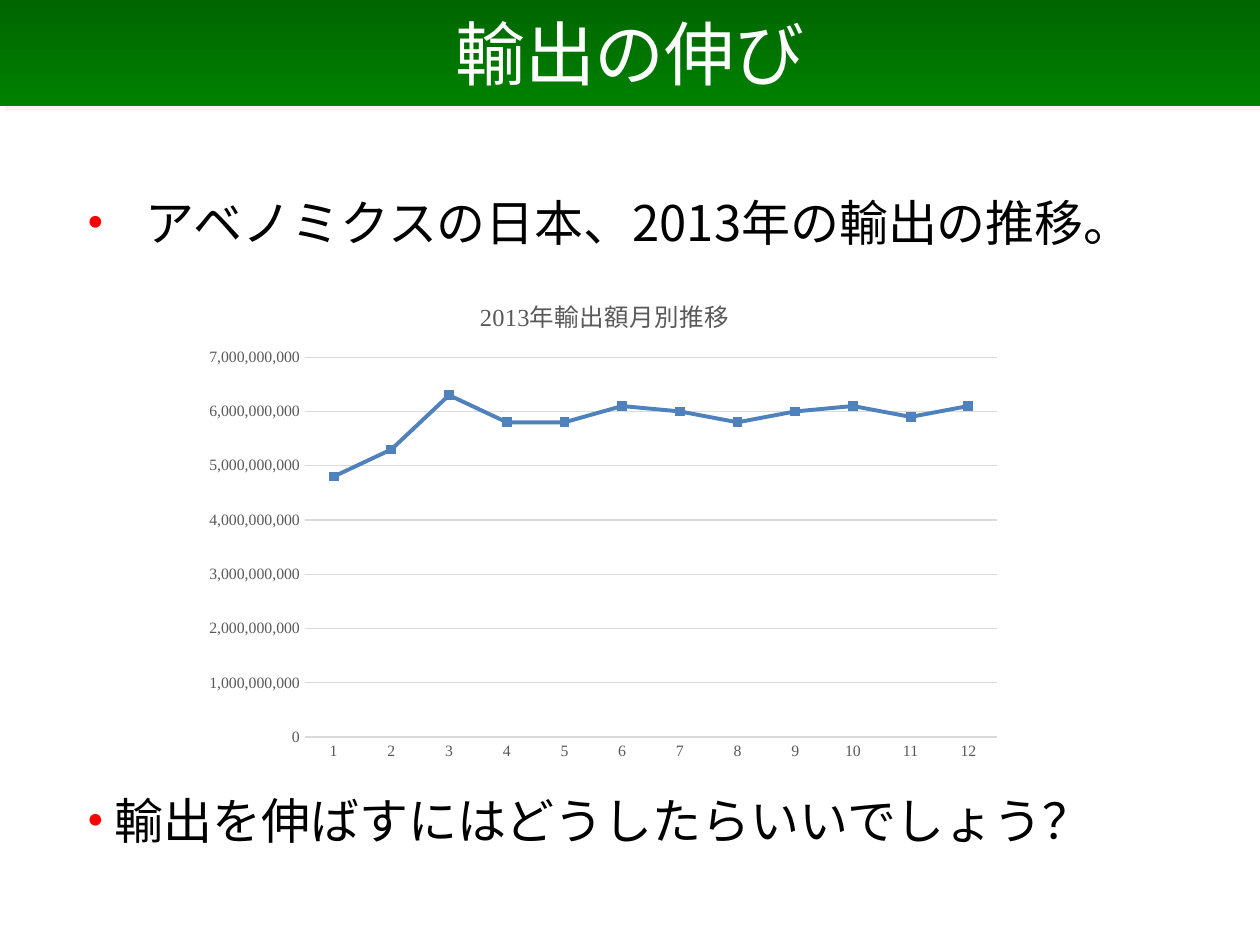
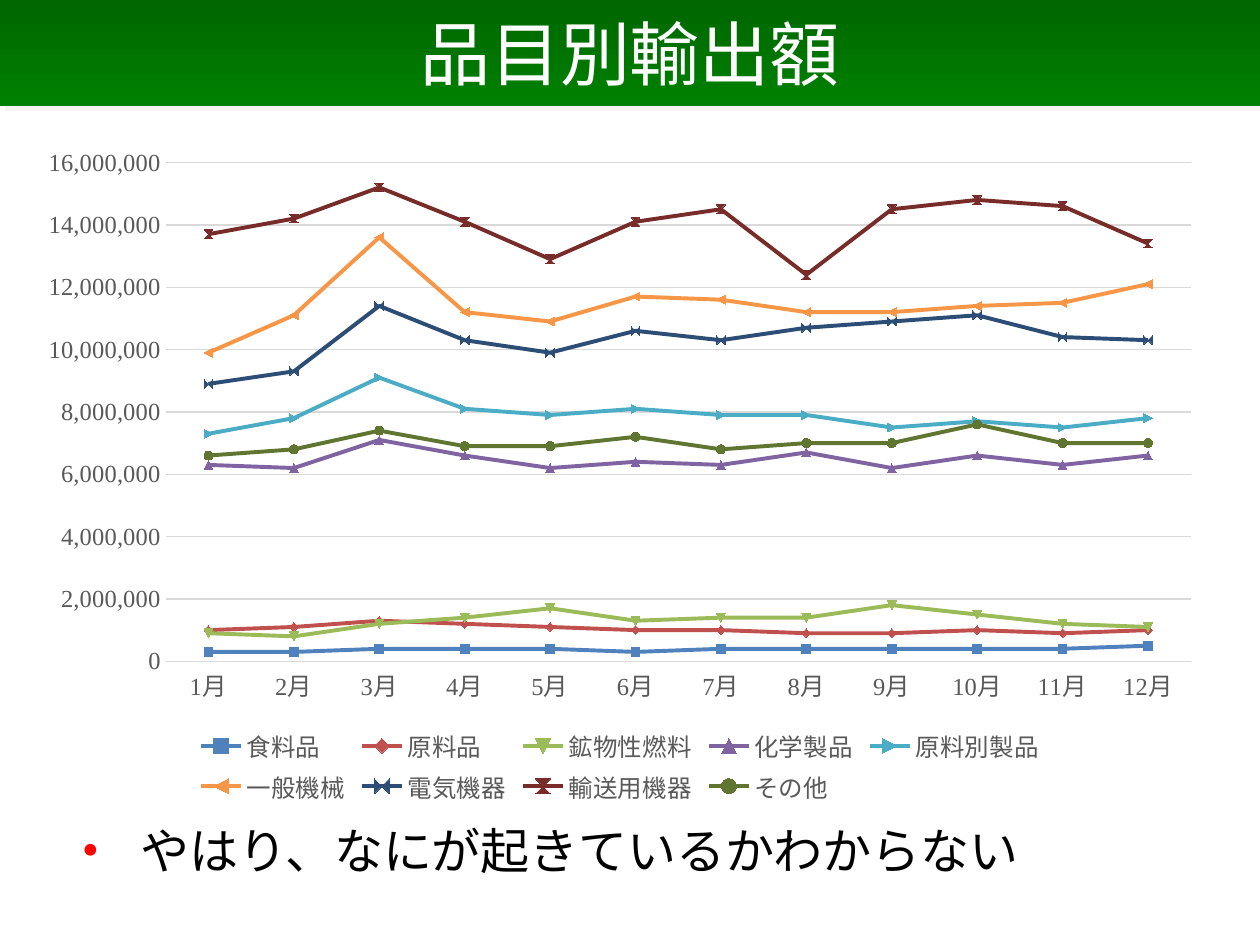
from lxml.etree import SubElement
from pptx import Presentation
from pptx.chart.data import CategoryChartData
from pptx.dml.color import RGBColor
from pptx.enum.chart import XL_CHART_TYPE, XL_LEGEND_POSITION, XL_TICK_MARK
from pptx.enum.shapes import MSO_SHAPE
from pptx.enum.text import MSO_ANCHOR, PP_ALIGN
from pptx.oxml import parse_xml
from pptx.oxml.ns import nsdecls, qn
from pptx.util import Cm, Pt

SERIF, SANS, CALIBRI = "Times New Roman", "Noto Sans CJK JP", "Calibri"
WHITE, BLACK, RED, GREY, GRID = "FFFFFF", "000000", "FF0000", "595959", "D9D9D9"
BAND_TOP, BAND_BOTTOM, BAND_SHADOW = "006600", "008000", "EEECE1"
WIDTH, HEIGHT, BAND_HEIGHT = 25.4, 19.05, 2.13
MONTHS = range(1, 13)

SLIDES = [
    {
        "title": "輸出の伸び",
        "title_font": SANS,
        "bullets": [
            (1.5, 3.76, 1.19, [("アベノミクスの日本、", SERIF), ("2013", SANS),
                               ("年の輸出の推移。", SERIF)]),
            (1.5, 15.82, 0.56, [("輸出を伸ばすにはどうしたらいいでしょう？", SERIF)]),
        ],
        "chart": {
            "box": (3.91, 5.51, 16.56, 10.01),
            "plot": (0.135, 0.169, 0.843, 0.765),
            "type": XL_CHART_TYPE.LINE_STACKED,
            "title": "2013年輸出額月別推移",
            "size": 9,
            "axis": (7_000_000_000, 1_000_000_000),
            "categories": [str(month) for month in MONTHS],
            "unit": 100_000_000,
            "legend": False,
            "series": [
                ("輸出額", "4F81BD", [48, 53, 63, 58, 58, 61, 60, 58, 60, 61, 59, 61]),
            ],
        },
    },
    {
        "title": "品目別輸出額",
        "title_font": CALIBRI,
        "bullets": [
            (1.4, 16.41, 1.19, [("やはり、なにが起きているかわからない", SERIF)]),
        ],
        "chart": {
            "box": (0.51, 2.72, 24, 13.59),
            "plot": (0.118, 0.041, 0.861, 0.74),
            "type": XL_CHART_TYPE.LINE,
            "title": None,
            "size": 14,
            "axis": (16_000_000, 2_000_000),
            "categories": [f"{month}月" for month in MONTHS],
            "unit": 100_000,
            "legend": True,
            "series": [
                ("食料品", "4F81BD", [3, 3, 4, 4, 4, 3, 4, 4, 4, 4, 4, 5]),
                ("原料品", "C0504D", [10, 11, 13, 12, 11, 10, 10, 9, 9, 10, 9, 10]),
                ("鉱物性燃料", "9BBB59", [9, 8, 12, 14, 17, 13, 14, 14, 18, 15, 12, 11]),
                ("化学製品", "8064A2", [63, 62, 71, 66, 62, 64, 63, 67, 62, 66, 63, 66]),
                ("原料別製品", "4BACC6", [73, 78, 91, 81, 79, 81, 79, 79, 75, 77, 75, 78]),
                ("一般機械", "F79646",
                 [99, 111, 136, 112, 109, 117, 116, 112, 112, 114, 115, 121]),
                ("電気機器", "2C4D75",
                 [89, 93, 114, 103, 99, 106, 103, 107, 109, 111, 104, 103]),
                ("輸送用機器", "772C2A",
                 [137, 142, 152, 141, 129, 141, 145, 124, 145, 148, 146, 134]),
                ("その他", "5F7530", [66, 68, 74, 69, 69, 72, 68, 70, 70, 76, 70, 70]),
            ],
        },
    },
]


def color(value):
    return RGBColor.from_string(value)


def format_font(font, size, name, fill):
    font.size = Pt(size)
    font.name = name
    font.bold = False
    font.color.rgb = color(fill)


def add_text(paragraph, text, size=28, font=SERIF, fill=BLACK):
    run = paragraph.add_run()
    run.text = text
    format_font(run.font, size, font, fill)
    SubElement(run.font._element, qn("a:ea")).set("typeface", SANS)


def add_band(slide, title, font):
    band = slide.shapes.add_shape(MSO_SHAPE.RECTANGLE, 0, 0, Cm(WIDTH), Cm(BAND_HEIGHT))
    band.line.fill.background()
    band.fill.gradient()
    band.fill.gradient_angle = 270
    for stop, value, position in zip(band.fill.gradient_stops,
                                     (BAND_TOP, BAND_BOTTOM), (0, 1)):
        stop.color.rgb = color(value)
        stop.position = position
    band.shadow.inherit = False
    band._element.spPr.find(qn("a:effectLst")).append(parse_xml(
        f'<a:outerShdw {nsdecls("a")} dist="53340" dir="2700000">'
        f'<a:srgbClr val="{BAND_SHADOW}"><a:alpha val="50000"/></a:srgbClr>'
        '</a:outerShdw>'))
    band.text_frame.vertical_anchor = MSO_ANCHOR.MIDDLE
    paragraph = band.text_frame.paragraphs[0]
    paragraph.alignment = PP_ALIGN.CENTER
    add_text(paragraph, title, size=40, font=font, fill=WHITE)


def add_bullet(slide, left, top, indent, pieces):
    box = slide.shapes.add_textbox(Cm(left), Cm(top), Cm(22.6), Cm(1.6))
    box.text_frame.word_wrap = True
    paragraph = box.text_frame.paragraphs[0]
    properties = paragraph._p.get_or_add_pPr()
    properties.set("marL", str(Cm(indent)))
    properties.set("indent", str(-Cm(indent)))
    marker = SubElement(properties, qn("a:buClr"))
    SubElement(marker, qn("a:srgbClr")).set("val", RED)
    SubElement(properties, qn("a:buFont")).set("typeface", SERIF)
    SubElement(properties, qn("a:buChar")).set("char", "•")
    for text, font in pieces:
        add_text(paragraph, text, font=font)


def place_plot(chart, plot):
    area = chart._chartSpace.chart.plotArea
    for layout in area.findall(qn("c:layout")):
        area.remove(layout)
    sizes = "".join(f'<c:{name} val="{value}"/>' for name, value in zip("xywh", plot))
    area.insert(0, parse_xml(
        f'<c:layout {nsdecls("c")}><c:manualLayout><c:layoutTarget val="inner"/>'
        f'<c:xMode val="edge"/><c:yMode val="edge"/>{sizes}'
        '</c:manualLayout></c:layout>'))


def format_axes(chart, size, maximum, step):
    for axis in (chart.category_axis, chart.value_axis):
        axis.major_tick_mark = axis.minor_tick_mark = XL_TICK_MARK.NONE
        format_font(axis.tick_labels.font, size, SERIF, GREY)
    values = chart.value_axis
    values.minimum_scale, values.maximum_scale, values.major_unit = 0, maximum, step
    values.tick_labels.number_format = "#,##0"
    values.tick_labels.number_format_is_linked = False
    values.format.line.fill.background()
    for line in (chart.category_axis.format.line, values.major_gridlines.format.line):
        line.color.rgb = color(GRID)
        line.width = Pt(0.75)


def add_line_chart(slide, content):
    data = CategoryChartData(number_format="#,##0")
    data.categories = content["categories"]
    for name, _, values in content["series"]:
        data.add_series(name, [value * content["unit"] for value in values])
    box = [Cm(length) for length in content["box"]]
    chart = slide.shapes.add_chart(content["type"], *box, data).chart
    format_font(chart.font, content["size"], SERIF, GREY)
    format_axes(chart, content["size"], *content["axis"])
    place_plot(chart, content["plot"])
    chart.plots[0].vary_by_categories = False
    for series, (_, value, _) in zip(chart.plots[0].series, content["series"]):
        series.smooth = False
        series.marker.style = None
        series.format.line.color.rgb = color(value)
        series.format.line.width = Pt(2.25)
    chart.has_title = bool(content["title"])
    if content["title"]:
        add_text(chart.chart_title.text_frame.paragraphs[0], content["title"],
                 size=14, fill=GREY)
        chart.chart_title.include_in_layout = False
    chart.has_legend = content["legend"]
    if content["legend"]:
        chart.legend.position = XL_LEGEND_POSITION.BOTTOM
        chart.legend.include_in_layout = False
        format_font(chart.legend.font, content["size"], SERIF, GREY)


def main():
    presentation = Presentation()
    presentation.slide_width = Cm(WIDTH)
    presentation.slide_height = Cm(HEIGHT)
    for content in SLIDES:
        slide = presentation.slides.add_slide(presentation.slide_layouts[6])
        add_band(slide, content["title"], content["title_font"])
        for bullet in content["bullets"]:
            add_bullet(slide, *bullet)
        add_line_chart(slide, content["chart"])
    presentation.save("out.pptx")


if __name__ == "__main__":
    main()
